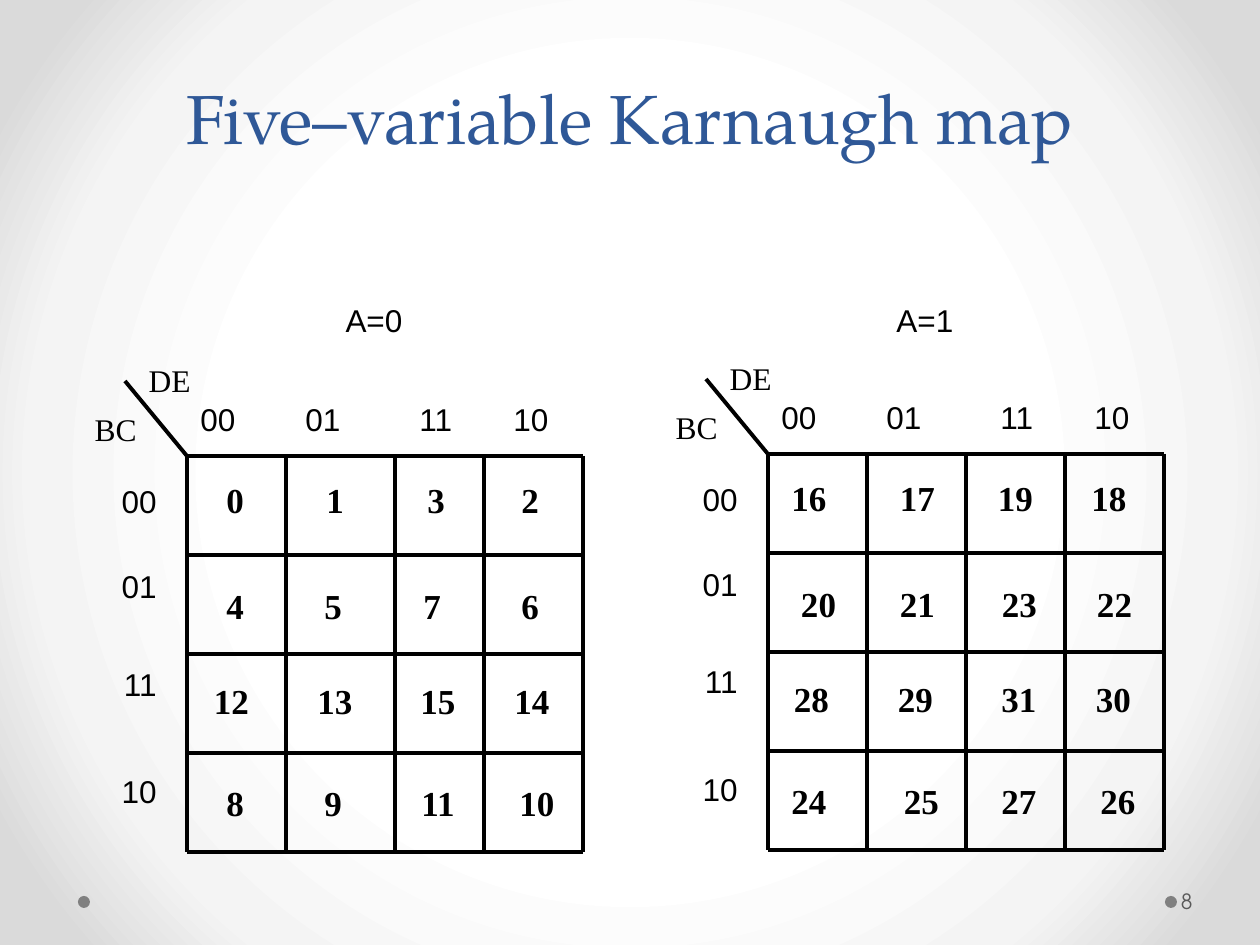
from pptx import Presentation
from pptx.dml.color import RGBColor
from pptx.enum.shapes import MSO_CONNECTOR as CONNECTOR, MSO_SHAPE as SHAPE
from pptx.enum.text import MSO_ANCHOR as ANCHOR, PP_ALIGN as ALIGN
from pptx.oxml import parse_xml
from pptx.oxml.ns import nsdecls, qn
from pptx.util import Pt
from lxml.etree import SubElement

PX = 914400 / 126
COLORS = {"title": "2F5897", "ink": "000000", "dot": "808080", "number": "595959",
          "centre": "FFFFFF", "middle": "F4F4F4", "edge": "DADADA"}
SERIF, SANS = "Times New Roman", "Arial"


def add_text(left, top, width, height, lines, font, size, color="ink",
             align=ALIGN.LEFT, bold=False, tabs=()):
    """Add one paragraph per line; tabs are px from the start of the text."""
    box = slide.shapes.add_textbox(*[round(n * PX) for n in (left, top, width, height)])
    frame = box.text_frame
    frame.word_wrap = True
    for index, line in enumerate(lines):
        para = frame.add_paragraph() if index else frame.paragraphs[0]
        para.text = line
        para.alignment = align
        if tabs:
            tab_list = SubElement(para._p.get_or_add_pPr(), qn("a:tabLst"))
            for stop in tabs:
                SubElement(tab_list, qn("a:tab"), pos=str(round(stop * PX)), algn="l")
        para.font.name = font
        para.font.size = Pt(size)
        para.font.bold = bold
        para.font.color.rgb = RGBColor.from_string(COLORS[color])
    return frame


def add_line(x1, y1, x2, y2, weight=2.13):
    line = slide.shapes.add_connector(
        CONNECTOR.STRAIGHT, *[round(n * PX) for n in (x1, y1, x2, y2)])
    line.line.color.rgb = RGBColor.from_string(COLORS["ink"])
    line.line.width = Pt(weight)
    SubElement(line._element.spPr, qn("a:effectLst"))


deck = Presentation()
deck.slide_width, deck.slide_height = round(1260 * PX), round(945 * PX)
slide = deck.slides.add_slide(deck.slide_layouts[6])

# Background: radial gradient from the centre
stops = "".join(
    f'<a:gs pos="{position}000"><a:srgbClr val="{COLORS[name]}"/></a:gs>'
    for position, name in ((50, "centre"), (76, "middle"), (92, "edge")))
slide.element.cSld.insert(0, parse_xml(
    f'<p:bg {nsdecls("p", "a")}><p:bgPr><a:gradFill rotWithShape="1">'
    f'<a:gsLst>{stops}</a:gsLst><a:path path="circle">'
    '<a:fillToRect l="50000" t="50000" r="50000" b="50000"/></a:path>'
    '</a:gradFill><a:effectLst/></p:bgPr></p:bg>'))

# Footer dots, title and slide number
for left in (1165, 78):
    dot = slide.shapes.add_shape(
        SHAPE.OVAL, *[round(n * PX) for n in (left, 896, 12, 12)])
    dot.shadow.inherit = False
    dot.fill.solid()
    dot.fill.fore_color.rgb = RGBColor.from_string(COLORS["dot"])
    dot.line.fill.background()

title = add_text(63, 52, 1134, 113, ["Five–variable Karnaugh map"],
                 "TeX Gyre Pagella", 39.6, "title", ALIGN.CENTER)
title.vertical_anchor = ANCHOR.BOTTOM
title.paragraphs[0].line_spacing = Pt(58)

number = add_text(1177, 876, 77, 50, ["8"], "TeX Gyre Adventor", 12, "number")
number.vertical_anchor = ANCHOR.MIDDLE
number.margin_left = round(4 * PX)

# Each cell is (minterm, left, width)
CELL = 99
ROW_TOPS = (16, 122, 217, 319)
MAPS = [
    {"label": "A=0", "label_left": 325, "left": 187, "top": 456,
     "columns": (0, 99, 208, 297, 396),
     "rows": [
         [(0, 214, 42), (1, 314, 42), (3, 415, 42), (2, 509, 42)],
         [(4, 214, 42), (5, 312, 42), (7, 411, 42), (6, 509, 42)],
         [(12, 197, 69), (13, 296, 78), (15, 394, 88), (14, 493, 78)],
         [(8, 214, 42), (9, 312, 42), (11, 384, 108), (10, 493, 88)]]},
    {"label": "A=1", "label_left": 876, "left": 768, "top": 454,
     "columns": (0, 99, 198, 297, 396),
     "rows": [
         [(16, 760, 98), (17, 878, 79), (19, 976, 79), (18, 1065, 88)],
         [(20, 779, 79), (21, 878, 79), (23, 985, 69), (22, 1075, 79)],
         [(28, 777, 69), (29, 876, 79), (31, 975, 88), (30, 1074, 79)],
         [(24, 760, 98), (25, 887, 69), (27, 965, 108), (26, 1074, 88)]]},
]

for karnaugh in MAPS:
    left, top = karnaugh["left"], karnaugh["top"]
    right, bottom = left + 4 * CELL, top + 4 * CELL

    for row_top, row in zip(ROW_TOPS, karnaugh["rows"]):
        for minterm, cell_left, width in row:
            add_text(cell_left, top + row_top, width, 55, [str(minterm)],
                     SERIF, 20, align=ALIGN.CENTER, bold=True)

    for column in karnaugh["columns"]:
        add_line(left + column, top, left + column, bottom)
    for row in range(5):
        add_line(left, top + row * CELL, right, top + row * CELL)
    add_line(left, top, left - 62, top - 75, 2.25)

    add_text(left + 1, top - 62, 387, 50, ["00\t01\t11\t10"], SANS, 18,
             tabs=(105, 219, 313))
    row_codes = add_text(left - 108, top + 20, 90, 354, ["00", "01", "11", "10"],
                         SANS, 18, align=ALIGN.RIGHT)
    for para, gap in zip(row_codes.paragraphs[1:], (27, 34, 40)):
        para.space_before = Pt(gap)

    add_text(left - 74, top - 101, 90, 50, ["DE"], SERIF, 18, align=ALIGN.RIGHT)
    add_text(left - 128, top - 52, 90, 50, ["BC"], SERIF, 18, align=ALIGN.RIGHT)
    add_text(karnaugh["label_left"], 295, 98, 50, [karnaugh["label"]], SANS, 18,
             align=ALIGN.CENTER)

deck.save("out.pptx")
